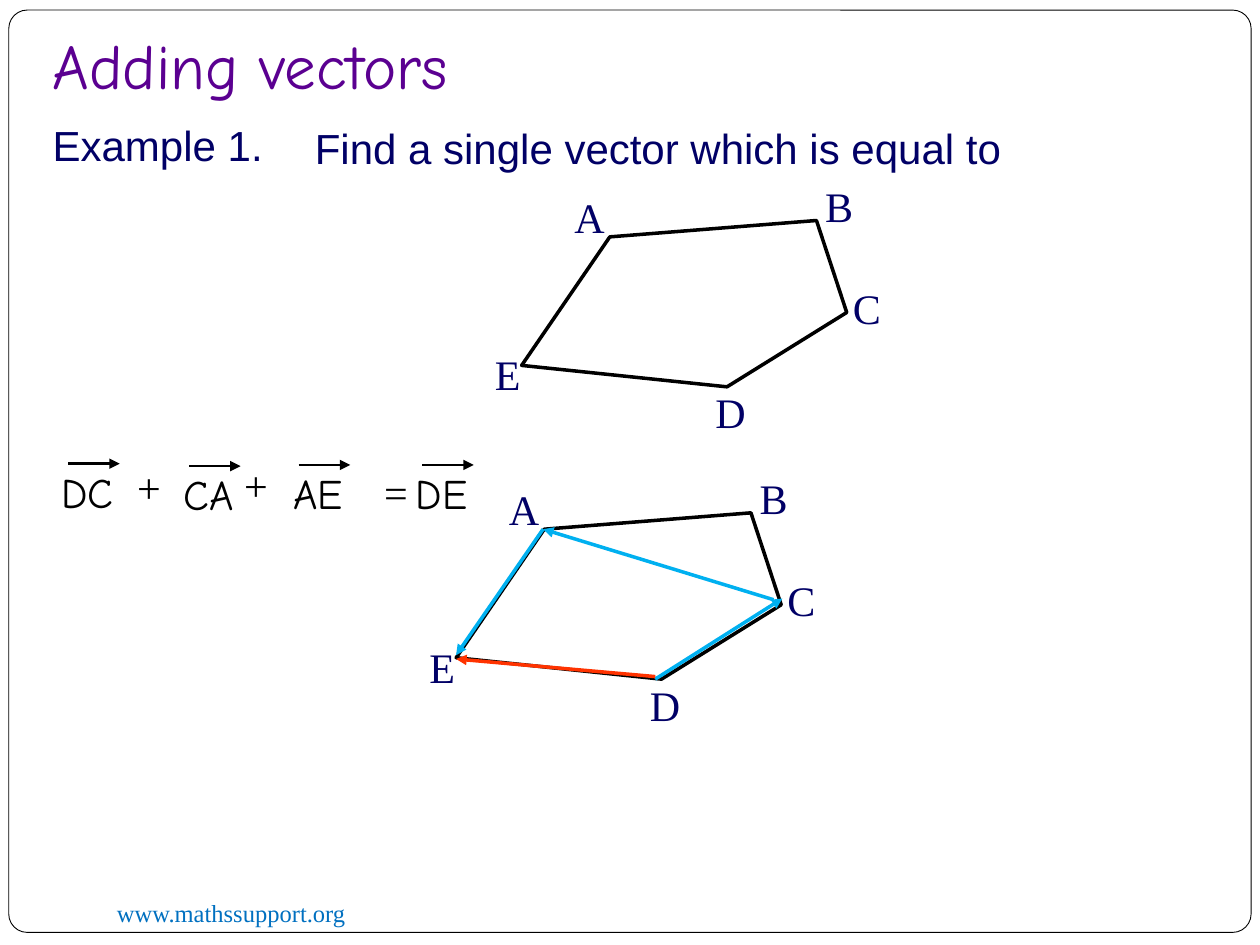
import pptx
import pptx.util
from lxml import etree
from pptx.dml.color import RGBColor
from pptx.enum.shapes import MSO_CONNECTOR, MSO_SHAPE
from pptx.enum.text import MSO_ANCHOR, PP_ALIGN
from pptx.oxml.ns import qn
from pptx.util import Inches

COLORS = {
    "ink": "000000",
    "navy": "010066",
    "title": "5B0091",
    "link": "0070C0",
    "step": "00B0F0",
    "result": "FF3300",
}
SANS, SERIF, HAND = "Arial", "Times New Roman", "Comic Neue"

# Offsets from the top left corner of the pentagon
VERTICES = {"E": (0, 1.15), "A": (0.7, 0.13), "B": (2.34, 0), "C": (2.58, 0.73), "D": (1.63, 1.32)}
LABEL_BOXES = {
    "E": (-0.31, 0.97, 0.41),
    "A": (0.32, -0.28, 0.45),
    "B": (2.31, -0.37, 0.43),
    "C": (2.53, 0.44, 0.43),
    "D": (1.44, 1.27, 0.45),
}
VECTOR_ARROWS = [
    ((1.58, 1.32), (2.59, 0.68), "step"),
    ((2.52, 0.69), (0.69, 0.13), "step"),
    ((0.69, 0.13), (0, 1.13), "step"),
    ((1.58, 1.3), (0, 1.16), "result"),
]
VECTOR_TERMS = [("DC", 0.37, 3.65), ("CA", 1.33, 3.67), ("AE", 2.2, 3.66), ("DE", 3.18, 3.66)]
OPERATORS = [("+", 0.99, 3.61), ("+", 1.84, 3.6), ("=", 2.95, 3.65)]


def color(name):
    return RGBColor.from_string(COLORS[name])


def style_text(frame, text, font_name, size, color_name):
    frame.text = text
    font = frame.paragraphs[0].runs[0].font
    font.name, font.size = font_name, pptx.util.Pt(size)
    font.color.rgb = color(color_name)


def add_text(slide, text, left, top, width, font_name, color_name, size=24, height=0.5, wrap=True):
    box = slide.shapes.add_textbox(Inches(left), Inches(top), Inches(width), Inches(height))
    frame = box.text_frame
    frame.word_wrap = wrap
    style_text(frame, text, font_name, size, color_name)
    return frame


def add_arrow(slide, start, end, color_name, weight):
    arrow = slide.shapes.add_connector(
        MSO_CONNECTOR.STRAIGHT, *(Inches(length) for length in (*start, *end)))
    arrow.line.color.rgb = color(color_name)
    arrow.line.width = pptx.util.Pt(weight)
    etree.SubElement(arrow.line._get_or_add_ln(), qn("a:tailEnd"), type="triangle")
    etree.SubElement(arrow._element.spPr, qn("a:effectLst"))


def add_outline(shape, weight):
    shape.shadow.inherit = False
    shape.fill.background()
    shape.line.color.rgb = color("ink")
    shape.line.width = pptx.util.Pt(weight)


def add_frame(slide, left, top, width, height):
    """Draw the rounded page border and the site address at its foot."""
    border = slide.shapes.add_shape(
        MSO_SHAPE.ROUNDED_RECTANGLE, Inches(left), Inches(top), Inches(width), Inches(height))
    border.adjustments[0] = 0.02
    add_outline(border, 0.5)
    add_text(slide, "www.mathssupport.org", left + 0.76, top + height - 0.32, 3.25,
             SERIF, "link", size=14, height=0.34)


def place_title(slide, left, top, width, height):
    title = slide.shapes.title
    title.left, title.top = Inches(left), Inches(top)
    title.width, title.height = Inches(width), Inches(height)
    frame = title.text_frame
    frame.vertical_anchor = MSO_ANCHOR.BOTTOM
    frame.margin_bottom = Inches(0.1)
    style_text(frame, "Adding vectors", HAND, 36, "title")
    frame.paragraphs[0].alignment = PP_ALIGN.LEFT


def add_question(slide, left, top):
    add_text(slide, "Example 1.", left, top, 1.93, SANS, "navy")
    add_text(slide, "Find a single vector which is equal to",
             left + 2.08, top + 0.02, 7.18, SANS, "navy")


def add_pentagon(slide, left, top, arrows=()):
    """Draw the lettered pentagon ABCDE with any vectors laid over it."""
    corners = [(Inches(left + x), Inches(top + y)) for x, y in VERTICES.values()]
    builder = slide.shapes.build_freeform(*corners[0])
    builder.add_line_segments(corners[1:], close=True)
    add_outline(builder.convert_to_shape(), 2)
    for letter, (x, y, width) in LABEL_BOXES.items():
        add_text(slide, letter, left + x, top + y, width, SERIF, "navy", wrap=False)
    for (x1, y1), (x2, y2), color_name in arrows:
        add_arrow(slide, (left + x1, top + y1), (left + x2, top + y2), color_name, 2)


def add_vector_name(slide, name, left, top):
    """Write two letters under a short arrow."""
    frame = add_text(slide, name, left, top, 0.65, HAND, "ink", wrap=False)
    frame.paragraphs[0].alignment = PP_ALIGN.CENTER
    add_arrow(slide, (left + 0.17, top + 0.03), (left + 0.58, top + 0.03), "ink", 1.5)


def add_vector_sum(slide):
    for name, left, top in VECTOR_TERMS:
        add_vector_name(slide, name, left, top)
    for operator, left, top in OPERATORS:
        add_text(slide, operator, left, top, 0.37, SERIF, "ink")


def main():
    deck = pptx.Presentation()
    deck.slide_width, deck.slide_height = Inches(10), Inches(7.5)
    slide = deck.slides.add_slide(deck.slide_layouts.get_by_name("Title Only"))
    add_frame(slide, 0.07, 0.08, 9.86, 7.32)
    place_title(slide, 0.32, 0.24, 8.5, 0.67)
    add_question(slide, 0.32, 0.9)
    add_pentagon(slide, 4.14, 1.75)
    add_vector_sum(slide)
    add_pentagon(slide, 3.62, 4.07, VECTOR_ARROWS)
    deck.save("out.pptx")


if __name__ == "__main__":
    main()
